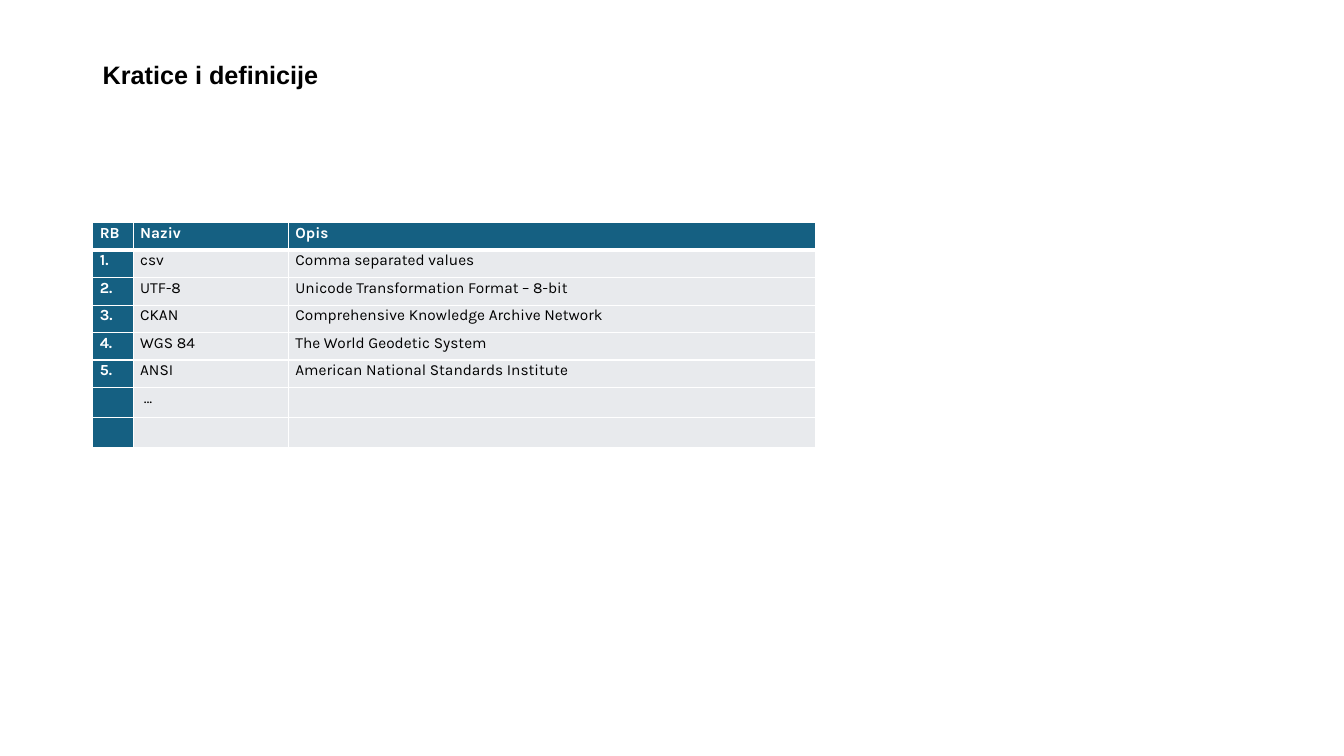
from lxml import etree
from pptx import Presentation
from pptx.dml.color import RGBColor
from pptx.enum.text import MSO_ANCHOR, PP_ALIGN
from pptx.oxml.ns import qn
from pptx.util import Inches, Pt

TOP, JUSTIFY = MSO_ANCHOR.TOP, PP_ALIGN.JUSTIFY
BLACK = RGBColor(0x00, 0x00, 0x00)
WHITE = RGBColor(0xFF, 0xFF, 0xFF)
TEAL = RGBColor(0x15, 0x60, 0x82)
GREY = RGBColor(0xE8, 0xEA, 0xED)

# Content
HEADING = "Kratice i definicije"
ABBREVIATIONS = [
    ("RB", "Naziv", "Opis"),
    ("1.", "csv", "Comma separated values"),
    ("2.", "UTF-8", "Unicode Transformation Format – 8-bit"),
    ("3.", "CKAN", "Comprehensive Knowledge Archive Network"),
    ("4.", "WGS 84", "The World Geodetic System"),
    ("5.", "ANSI", "American National Standards Institute"),
    ("", " …", ""),
    ("", "", ""),
]

# Layout
LEFT = 0.92
COLUMN_WIDTHS = (0.4, 1.54, 5.23)
TABLE_TOP, TABLE_HEIGHT = 2.21, 2.18
HEADING_FONT = {"name": "Arial", "size": Pt(18), "bold": True}
CELL_FONT = {"name": "Karla", "size": Pt(11)}
CELL_MARGINS = {
    "margin_left": Inches(0.07), "margin_right": Inches(0.07),
    "margin_top": 0, "margin_bottom": 0,
}


def set_all(target, values):
    for name, value in values.items():
        setattr(target, name, value)


def write(paragraph, text, font, color):
    run = paragraph.add_run()
    run.text = text
    set_all(run.font, font)
    run.font.color.rgb = color


def add_border(cell, side, width):
    line = etree.SubElement(cell._tc.get_or_add_tcPr(), qn(f"a:ln{side}"), w=str(Pt(width)))
    fill = etree.SubElement(line, qn("a:solidFill"))
    etree.SubElement(fill, qn("a:srgbClr"), val=str(WHITE))


prs = Presentation()
prs.slide_width, prs.slide_height = Inches(13.33), Inches(7.5)
slide = prs.slides.add_slide(prs.slide_layouts[6])

# Heading
heading = slide.shapes.add_textbox(Inches(LEFT), Inches(0.4), Inches(11.5), Inches(1.45)).text_frame
set_all(heading, {"word_wrap": True, "vertical_anchor": TOP, "margin_top": Inches(0.22)})
heading.paragraphs[0].line_spacing = 0.9
write(heading.paragraphs[0], HEADING, HEADING_FONT, BLACK)

# Table of abbreviations
table = slide.shapes.add_table(
    len(ABBREVIATIONS), len(COLUMN_WIDTHS), Inches(LEFT), Inches(TABLE_TOP),
    Inches(sum(COLUMN_WIDTHS)), Inches(TABLE_HEIGHT)).table
table.first_col = True
table.horz_banding = False
for column, width in zip(table.columns, COLUMN_WIDTHS):
    column.width = Inches(width)

for r, entry in enumerate(ABBREVIATIONS):
    for c, text in enumerate(entry):
        cell = table.cell(r, c)
        is_header = r == 0 or c == 0
        set_all(cell, CELL_MARGINS)
        # The rule under the header row is thicker
        widths = {"L": 1, "R": 1, "T": 3 if r == 1 else 1, "B": 3 if r == 0 else 1}
        for side, width in widths.items():
            add_border(cell, side, width)
        cell.fill.solid()
        cell.fill.fore_color.rgb = TEAL if is_header else GREY
        paragraph = cell.text_frame.paragraphs[0]
        set_all(paragraph, {"alignment": JUSTIFY, "line_spacing": Pt(14)})
        if text:
            write(paragraph, text, {**CELL_FONT, "bold": is_header}, WHITE if is_header else BLACK)

prs.save("out.pptx")
